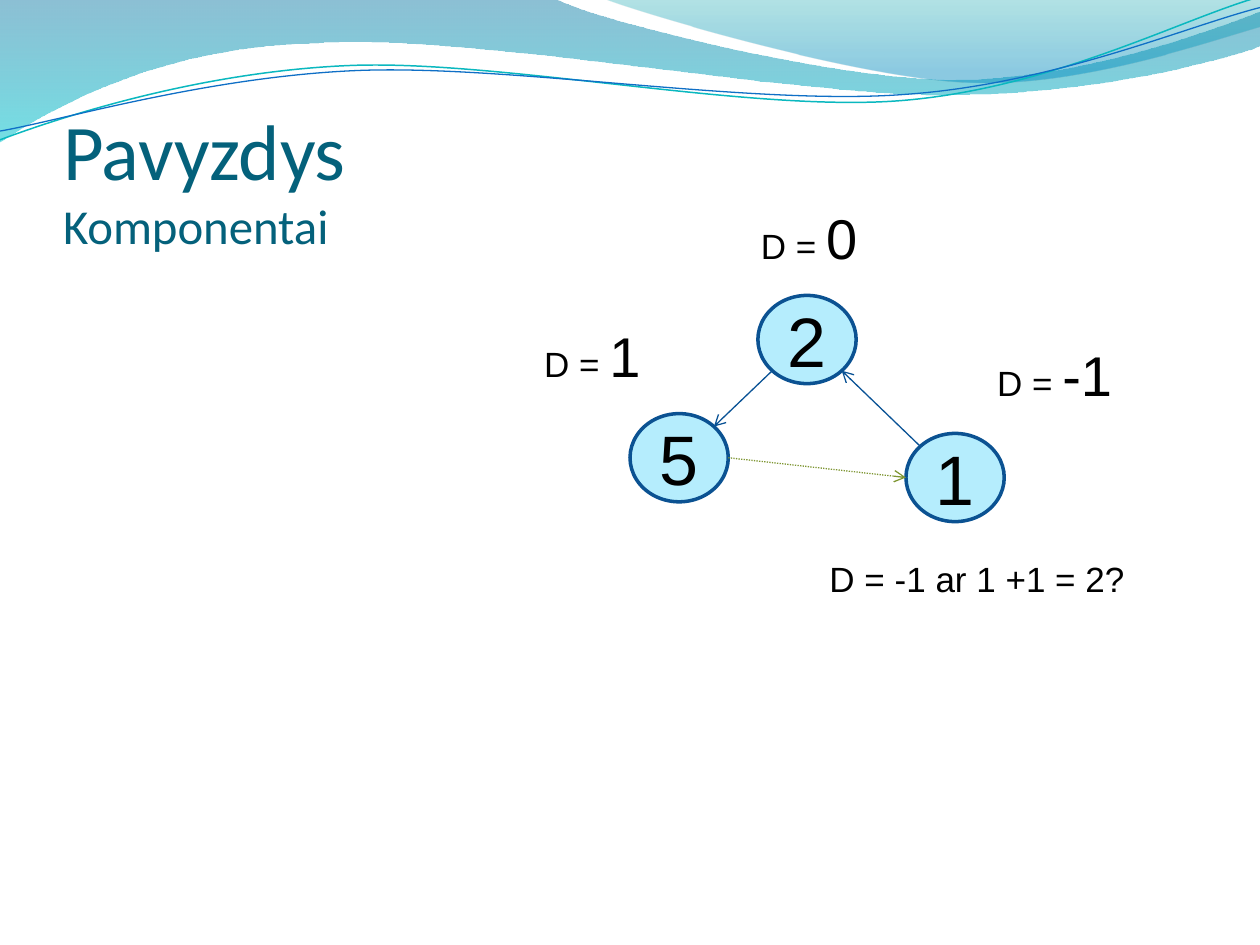
import math
from dataclasses import dataclass
from typing import NamedTuple, Optional

from lxml import etree
from pptx import Presentation
from pptx import util as u
from pptx.dml.color import RGBColor
from pptx.enum import dml, shapes, text
from pptx.oxml.ns import qn

# Grid of 100 columns by 75 rows
COLS, ROWS = 100, 75
prs = Presentation()
prs.slide_width, prs.slide_height = u.Inches(10), u.Inches(7.5)


def col(n: float) -> int:
    return round(prs.slide_width * n / COLS)


def row(n: float) -> int:
    return round(prs.slide_height * n / ROWS)


@dataclass(frozen=True)
class Theme:
    body_font: str = "Arial"
    title_font: str = "Calibri"
    title: str = "04617B"
    ink: str = "000000"
    node_fill: str = "B5EDFD"
    node_line: str = "0B5292"
    edge: str = "095295"
    candidate: str = "7E9632"
    title_size: float = 45
    subtitle_size: float = 27.9
    node_size: float = 40
    value_size: float = 32
    label_size: float = 20


class Stop(NamedTuple):
    position: float
    color: str
    opacity: int


@dataclass(frozen=True)
class Wave:
    start: tuple
    segments: list  # cubic curves of six numbers, straight lines of two
    stops: Optional[list] = None
    line: Optional[tuple] = None  # colour, points
    center: tuple = (50, 5)
    tilt: float = 0


@dataclass(frozen=True)
class Node:
    name: str
    left: float
    top: float
    width: float = 7.8
    height: float = 7

    def rim(self, degrees: float) -> tuple:
        """Point on the outline, clockwise from the right."""
        a = math.radians(degrees)
        return (self.left + self.width / 2 * (1 + math.cos(a)),
                self.top + self.height / 2 * (1 + math.sin(a)))


class Label(NamedTuple):
    left: float
    top: float
    width: float
    height: float
    caption: str
    value: str = ""


THEME = Theme()

WAVES = [
    Wave((0, 0), [(44, -0.1), (47.6, 1.7, 66.4, 6.3, 75.8, 6.3),
                  (85.3, 6.3, 95.8, 2.6, 100, 0.9), (100.1, 3.6),
                  (98.3, 4.4, 87, 7.6, 74.6, 7.5), (62.2, 7.5, 38.2, 2.8, 25.7, 3.4),
                  (12.9, 3.6, 4.6, 8.3, -0.1, 11.3), (0, 0)],
         stops=[Stop(0, "0074A1", 45), Stop(1, "00C6CF", 55)]),
    Wave((47.9, -0.1), [(50.9, 1.1, 68.2, 6.2, 76.9, 6.5),
                        (85.6, 6.9, 96.1, 3.2, 100, 2.1), (100, 0), (47.9, -0.1)],
         stops=[Stop(0, "00A1A9", 30), Stop(0.8, "008BBF", 45)]),
    Wave((0, 11.1), [(4.8, 9.3, 15.8, 5.7, 27.7, 5.2), (39.5, 4.7, 59.3, 8.9, 71.3, 8),
                     (83.3, 7.1, 93.8, 1.5, 99.8, -0.2)],
         line=("0AB8BF", 0.85), center=(49.9, 5.75), tilt=-2.7),
    Wave((0, 10.4), [(4.7, 9.6, 16.4, 6.1, 28.3, 5.6), (40.3, 5.1, 59.7, 8.4, 71.7, 7.5),
                     (83.6, 6.7, 94.1, 2.1, 100, 0.6)],
         line=("0F6FC6", 0.75), center=(49.95, 5.9), tilt=-2.7),
]

ONE, TWO, FIVE = Node("1", 71.9, 34.4), Node("2", 60.15, 23.45), Node("5", 50, 32.83)

LABELS = [
    Label(59.4, 15.65, 10.2, 6.4, "D = ", "0"),
    Label(42.2, 25, 13.3, 6.4, "D = ", "1"),
    Label(78.15, 26.55, 13.3, 6.4, "D = ", "-1"),
    Label(64.85, 43.75, 27.3, 4.4, "D = -1 ar 1 +1 = 2?"),
]


def rgb(value: str) -> RGBColor:
    return RGBColor.from_string(value)


def add_run(p, words: str, size: float, color: str = THEME.ink,
            font: str = THEME.body_font) -> None:
    r = p.add_run()
    r.text = words
    r.font.size, r.font.name = u.Pt(size), font
    r.font.color.rgb = rgb(color)


def set_line(line, color: str, width: float) -> None:
    line.color.rgb = rgb(color)
    line.width = u.Pt(width)


def level_points(wave: Wave) -> list:
    """The wave's points before its tilt is applied, in EMU."""
    flat = [n for seg in [wave.start, *wave.segments] for n in seg]
    a, (cx, cy) = math.radians(-wave.tilt), wave.center
    turned = [(cx + (x - cx) * math.cos(a) - (y - cy) * math.sin(a),
               cy + (x - cx) * math.sin(a) + (y - cy) * math.cos(a))
              for x, y in zip(flat[::2], flat[1::2])]
    return [(col(x), row(y)) for x, y in turned]


def bend(sp, segments: list) -> None:
    """Join each three steps that belong to a cubic segment into one curve."""
    steps = iter(list(sp.element.spPr.iter(qn("a:lnTo"))))
    for seg in segments:
        parts = [next(steps) for _ in range(len(seg) // 2)]
        if len(parts) == 3:
            curve = etree.Element(qn("a:cubicBezTo"))
            parts[0].addprevious(curve)
            for part in parts:
                curve.append(part[0])
                part.getparent().remove(part)


def draw_wave(s, wave: Wave) -> None:
    points = level_points(wave)
    builder = s.shapes.build_freeform(*points[0])
    builder.add_line_segments(points[1:], close=bool(wave.stops))
    sp = builder.convert_to_shape()
    bend(sp, wave.segments)
    sp.rotation = wave.tilt
    sp.shadow.inherit = False
    if wave.line:
        sp.fill.background()
        set_line(sp.line, *wave.line)
    else:
        sp.line.fill.background()
        sp.fill.gradient()
        sp.fill.gradient_angle = 270
        for target, stop in zip(sp.fill.gradient_stops, wave.stops):
            target.position = stop.position
            target.color.rgb = rgb(stop.color)
        for clr, stop in zip(sp.element.spPr.iter(qn("a:srgbClr")), wave.stops):
            etree.SubElement(clr, qn("a:alpha"), val=str(stop.opacity * 1000))
    # Decoration belongs to the master
    master = prs.slide_master.shapes
    next(sp.element.iter(qn("p:cNvPr"))).set("id", str(100 + len(master)))
    master.element.append(sp.element)


def draw_node(s, node: Node) -> None:
    sp = s.shapes.add_shape(shapes.MSO_SHAPE.OVAL, col(node.left), row(node.top),
                            col(node.width), row(node.height))
    sp.shadow.inherit = False
    sp.fill.solid()
    sp.fill.fore_color.rgb = rgb(THEME.node_fill)
    set_line(sp.line, THEME.node_line, 2)
    tf = sp.text_frame
    tf.vertical_anchor = text.MSO_ANCHOR.MIDDLE
    p = tf.paragraphs[0]
    p.alignment = text.PP_ALIGN.CENTER
    add_run(p, node.name, THEME.node_size)


def draw_arrow(s, start: tuple, end: tuple, color: str, dotted: bool = False) -> None:
    cx = s.shapes.add_connector(shapes.MSO_CONNECTOR.STRAIGHT, col(start[0]),
                                row(start[1]), col(end[0]), row(end[1]))
    set_line(cx.line, color, 0.75)
    if dotted:
        cx.line.dash_style = dml.MSO_LINE.ROUND_DOT
    props = cx.element.spPr
    etree.SubElement(props.find(qn("a:ln")), qn("a:tailEnd"), type="arrow")
    etree.SubElement(props, qn("a:effectLst"))


def draw_label(s, label: Label) -> None:
    tb = s.shapes.add_textbox(col(label.left), row(label.top),
                              col(label.width), row(label.height))
    tf = tb.text_frame
    tf.word_wrap = True
    tf.auto_size = text.MSO_AUTO_SIZE.SHAPE_TO_FIT_TEXT
    p = tf.paragraphs[0]
    add_run(p, label.caption, THEME.label_size)
    if label.value:
        add_run(p, label.value, THEME.value_size)


def write_title(s) -> None:
    title = s.shapes.title
    title.left, title.top, title.width, title.height = col(5), row(7.7), col(90), row(12.5)
    tf = title.text_frame
    tf.auto_size = text.MSO_AUTO_SIZE.NONE
    tf.vertical_anchor = text.MSO_ANCHOR.BOTTOM
    tf.margin_left = tf.margin_right = tf.margin_bottom = 0
    tf.margin_top = u.Inches(0.05)
    p = tf.paragraphs[0]
    p.alignment = text.PP_ALIGN.LEFT
    add_run(p, "Pavyzdys", THEME.title_size, THEME.title, THEME.title_font)
    p.add_line_break()
    add_run(p, "Komponentai", THEME.subtitle_size, THEME.title, THEME.title_font)


# Waves and title, then the graph, then the balance labels
s = prs.slides.add_slide(prs.slide_layouts[5])
for wave in WAVES:
    draw_wave(s, wave)
write_title(s)
for node in (ONE, TWO, FIVE):
    draw_node(s, node)
draw_arrow(s, ONE.rim(225), TWO.rim(45), THEME.edge)
draw_arrow(s, TWO.rim(135), FIVE.rim(315), THEME.edge)
draw_arrow(s, FIVE.rim(0), ONE.rim(180), THEME.candidate, dotted=True)
for label in LABELS:
    draw_label(s, label)
prs.save("out.pptx")
